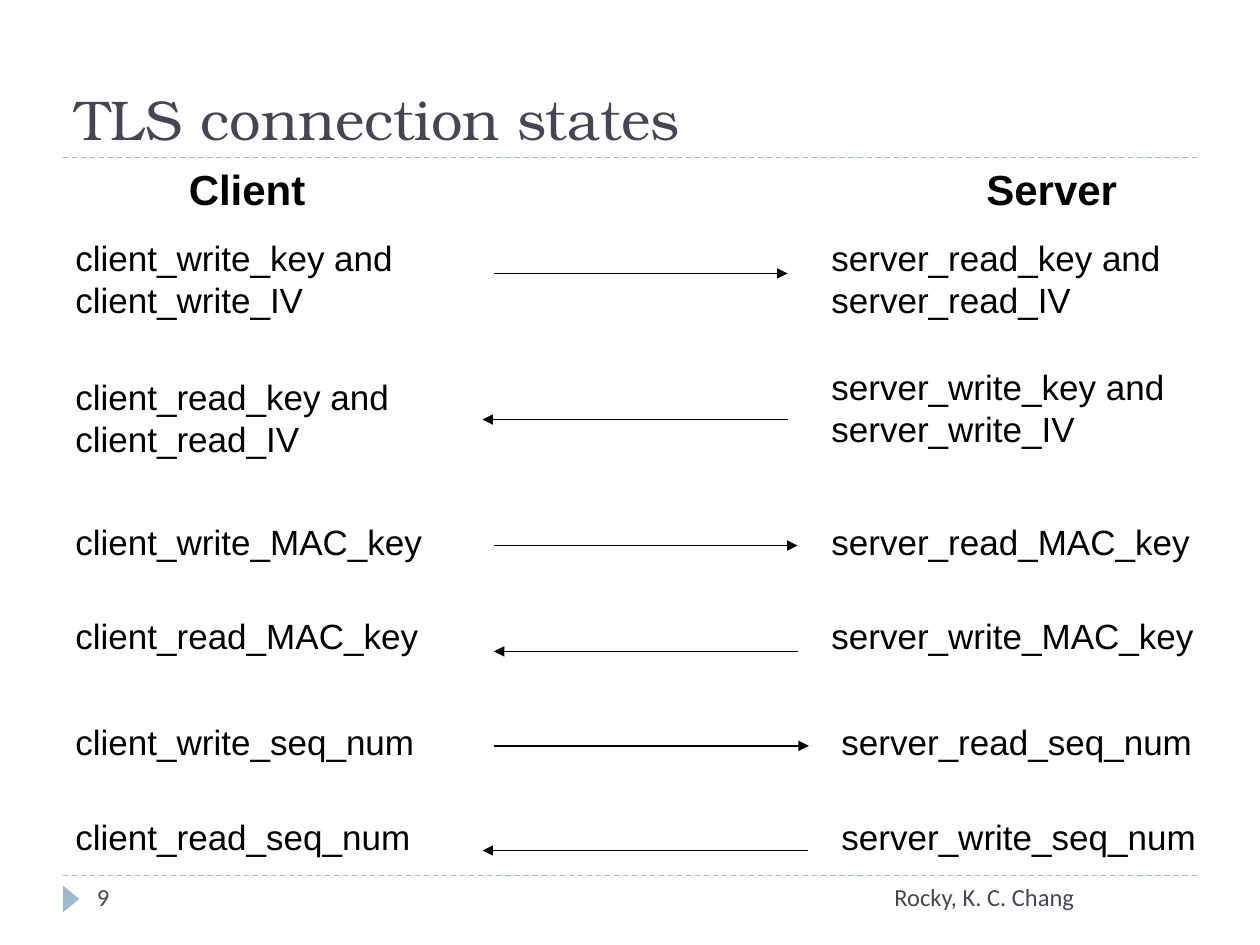
from dataclasses import dataclass

from lxml import etree
from pptx import Presentation
from pptx.dml.color import RGBColor
from pptx.enum.dml import MSO_LINE
from pptx.enum.shapes import MSO_CONNECTOR, MSO_SHAPE
from pptx.enum.text import MSO_ANCHOR
from pptx.oxml.ns import qn
from pptx.util import Inches, Pt

STRAIGHT = MSO_CONNECTOR.STRAIGHT
TRIANGLE = MSO_SHAPE.ISOSCELES_TRIANGLE
DASH = MSO_LINE.DASH
TOP, BOTTOM = MSO_ANCHOR.TOP, MSO_ANCHOR.BOTTOM


@dataclass(frozen=True)
class Theme:
    accent: RGBColor = RGBColor(0x9F, 0xB8, 0xCD)
    heading: RGBColor = RGBColor(0x46, 0x46, 0x53)
    ink: RGBColor = RGBColor(0, 0, 0)
    title_font: str = "TeX Gyre Bonum"
    body_font: str = "Arial"
    footer_font: str = "Calibri"
    title_size: int = 32
    party_size: int = 24
    body_size: int = 20
    footer_size: int = 14
    line_width: float = 0.75


theme = Theme()
prs = Presentation()
prs.slide_width, prs.slide_height = Inches(10), Inches(7.5)
slide = prs.slides.add_slide(prs.slide_layouts[6])


def add_text(text, box, font, size, color, bold=False, wrap=True, anchor=TOP):
    tf = slide.shapes.add_textbox(*map(Inches, box)).text_frame
    tf.word_wrap = wrap
    tf.vertical_anchor = anchor
    r = tf.paragraphs[0].add_run()
    r.text = text
    r.font.name, r.font.size, r.font.bold = font, Pt(size), bold
    r.font.color.rgb = color


def add_line(x1, x2, y, color):
    """Draw a horizontal line without shadow and return its line format."""
    sp = slide.shapes.add_connector(
        STRAIGHT, Inches(x1), Inches(y), Inches(x2), Inches(y))
    sp.line.color.rgb = color
    sp.line.width = Pt(theme.line_width)
    etree.SubElement(sp._element.spPr, qn("a:effectLst"))
    return sp.line


# Rules and footer marker
for y in (6.95, 1.25):
    add_line(0.5, 9.5, y, theme.accent).dash_style = DASH

marker = slide.shapes.add_shape(
    TRIANGLE, Inches(0.46), Inches(7.07), Inches(0.21), Inches(0.13))
marker.rotation = 90
marker.shadow.inherit = False
marker.fill.solid()
marker.fill.fore_color.rgb = theme.accent
marker.line.fill.background()

# Title and footer
add_text("TLS connection states", (0.5, 0.17, 9, 1.08), theme.title_font,
         theme.title_size, theme.heading, anchor=BOTTOM)
for text, x, width in (("Rocky, K. C. Chang", 7, 2.5), ("9", 0.67, 2.17)):
    add_text(text, (x, 6.95, width, 0.4), theme.footer_font,
             theme.footer_size, theme.heading)

# Parties
for name, x, width in (("Client", 1.4, 1.13), ("Server", 7.73, 1.24)):
    add_text(name, (x, 1.25, width, 0.5), theme.body_font,
             theme.party_size, theme.ink, bold=True, wrap=False)

# Matching states: (client text, top), (server text, left, top), (arrow from, to, y)
states = [
    (("client_write_key and client_write_IV", 1.83),
     ("server_read_key and server_read_IV", 6.5, 1.83), (3.92, 6.25, 2.17)),
    (("client_read_key and client_read_IV", 2.93),
     ("server_write_key and server_write_IV", 6.5, 2.85), (6.25, 3.83, 3.33)),
    (("client_write_MAC_key", 4.08),
     ("server_read_MAC_key", 6.5, 4.08), (3.92, 6.33, 4.33)),
    (("client_read_MAC_key", 4.83),
     ("server_write_MAC_key", 6.5, 4.83), (6.33, 3.92, 5.17)),
    (("client_write_seq_num", 5.67),
     ("server_read_seq_num", 6.58, 5.67), (3.92, 6.42, 5.92)),
    (("client_read_seq_num", 6.42),
     ("server_write_seq_num", 6.58, 6.42), (6.41, 3.83, 6.75)),
]
for (client, client_y), (server, server_x, server_y), (x1, x2, y) in states:
    two_lines = " and " in client
    client_w, server_w, height = (3.17, 3.08, 0.77) if two_lines else (3.42, 3.42, 0.43)
    for text, box in ((client, (0.5, client_y, client_w, height)),
                      (server, (server_x, server_y, server_w, height))):
        add_text(text, box, theme.body_font, theme.body_size, theme.ink)
    ln = add_line(x1, x2, y, theme.ink).fill._xPr
    etree.SubElement(ln, qn("a:tailEnd"), type="triangle")

prs.save("out.pptx")
